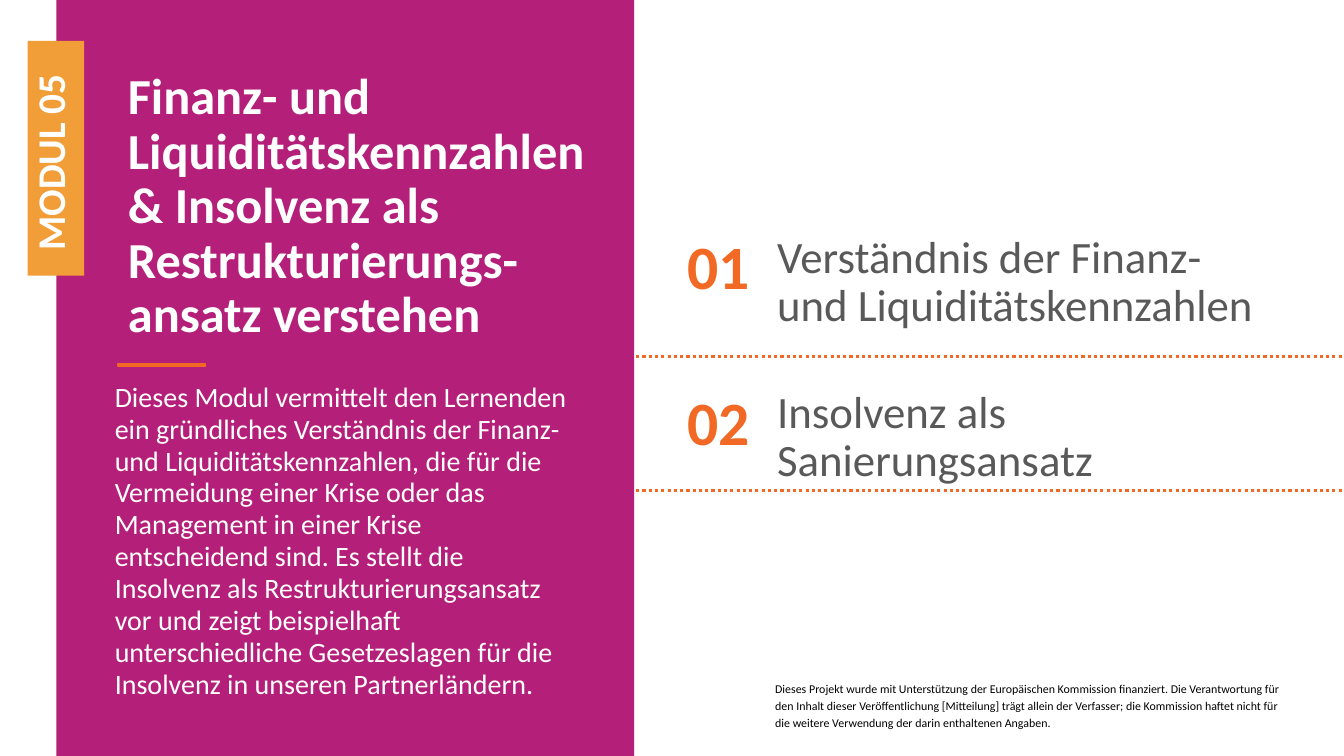
from dataclasses import dataclass

from lxml import etree
from pptx import Presentation
from pptx.dml.color import RGBColor
from pptx.enum.dml import MSO_LINE
from pptx.enum.shapes import MSO_CONNECTOR, MSO_SHAPE
from pptx.enum.text import MSO_ANCHOR as ANCHOR, PP_ALIGN as ALIGN
from pptx.oxml.ns import qn
from pptx.util import Inches, Pt

FONT = "Calibri"
COLORS = {
    "magenta": "B41F7A",
    "orange": "F16924",
    "amber": "F29E38",
    "grey": "595959",
    "white": "FFFFFF",
    "black": "000000",
}
SLIDE_W, SLIDE_H = 13.33, 7.5


@dataclass
class Style:
    size: float
    color: str
    bold: bool = False
    spacing: float | Pt = 0.9
    align: ALIGN = ALIGN.LEFT
    anchor: ANCHOR = ANCHOR.TOP


@dataclass
class Block:
    text: str
    left: float
    top: float
    width: float
    height: float
    style: Style


@dataclass
class Topic:
    number: str
    text: str
    number_top: float
    text_top: float
    text_height: float
    rule_y: float


TITLE = Style(36, "white", bold=True)
SUMMARY = Style(20, "white", spacing=Pt(22.8))
TAB = Style(28, "white", bold=True, spacing=Pt(24.4), anchor=ANCHOR.MIDDLE)
NUMBER = Style(44, "orange", bold=True, align=ALIGN.CENTER, anchor=ANCHOR.MIDDLE)
TOPIC = Style(32, "grey", anchor=ANCHOR.MIDDLE)
NOTICE = Style(8.5, "black", spacing=1.2)

BLOCKS = [
    Block("Finanz- und Liquiditätskennzahlen & Insolvenz als "
          "Restrukturierungs-ansatz verstehen", 1.17, 0.66, 4.99, 2.97, TITLE),
    Block("Dieses Modul vermittelt den Lernenden ein gründliches Verständnis der "
          "Finanz- und Liquiditätskennzahlen, die für die Vermeidung einer Krise "
          "oder das Management in einer Krise entscheidend sind. Es stellt die "
          "Insolvenz als Restrukturierungsansatz vor und zeigt beispielhaft "
          "unterschiedliche Gesetzeslagen für die Insolvenz in unseren "
          "Partnerländern.", 1.04, 3.73, 4.74, 2.71, SUMMARY),
    Block("Dieses Projekt wurde mit Unterstützung der Europäischen Kommission "
          "finanziert. Die Verantwortung für den Inhalt dieser Veröffentlichung "
          "[Mitteilung] trägt allein der Verfasser; die Kommission haftet nicht "
          "für die weitere Verwendung der darin enthaltenen Angaben.",
          7.59, 6.68, 5.2, 0.6, NOTICE),
]
TOPICS = [
    Topic("01", "Verständnis der Finanz- und Liquiditätskennzahlen",
          2.33, 2.36, 0.9, 3.54),
    Topic("02", "Insolvenz als Sanierungsansatz", 3.88, 4, 0.69, 4.87),
]


def rgb(name: str) -> RGBColor:
    return RGBColor.from_string(COLORS[name])


def write(s, text: str, style: Style) -> None:
    tf = s.text_frame
    tf.text = text
    tf.word_wrap = True
    tf.vertical_anchor = style.anchor
    p = tf.paragraphs[0]
    p.alignment = style.align
    p.line_spacing = style.spacing
    font = p.runs[0].font
    font.name = FONT
    font.size = Pt(style.size)
    font.bold = style.bold
    font.color.rgb = rgb(style.color)


def add_text(slide, block: Block) -> None:
    s = slide.shapes.add_textbox(Inches(block.left), Inches(block.top),
                                 Inches(block.width), Inches(block.height))
    write(s, block.text, block.style)


def add_rect(slide, left: float, top: float, width: float, height: float,
             color: str):
    s = slide.shapes.add_shape(MSO_SHAPE.RECTANGLE, Inches(left), Inches(top),
                               Inches(width), Inches(height))
    s.shadow.inherit = False
    s.fill.solid()
    s.fill.fore_color.rgb = rgb(color)
    s.line.fill.background()
    return s


def add_dotted_rule(slide, y: float) -> None:
    s = slide.shapes.add_connector(MSO_CONNECTOR.STRAIGHT, Inches(6.31), Inches(y),
                                   Inches(SLIDE_W), Inches(y))
    s.line.color.rgb = rgb("orange")
    s.line.width = Pt(2.25)
    s.line.dash_style = MSO_LINE.ROUND_DOT
    etree.SubElement(s._element.spPr, qn("a:effectLst"))


def add_topic(slide, topic: Topic) -> None:
    add_text(slide, Block(topic.number, 6.67, topic.number_top, 0.91, 0.69, NUMBER))
    add_text(slide, Block(topic.text, 7.61, topic.text_top, 5.2,
                          topic.text_height, TOPIC))
    add_dotted_rule(slide, topic.rule_y)


def main() -> None:
    prs = Presentation()
    prs.slide_width, prs.slide_height = Inches(SLIDE_W), Inches(SLIDE_H)
    slide = prs.slides.add_slide(prs.slide_layouts[6])

    # Magenta panel with its title, summary and the funding notice
    add_rect(slide, 0.56, 0, 5.73, SLIDE_H, "magenta")
    for block in BLOCKS:
        add_text(slide, block)

    # Short accent under the title
    accent = add_rect(slide, 1.17, 3.61, 0.87, 0.02, "orange")
    accent.line.color.rgb = rgb("orange")
    accent.line.width = Pt(1)

    # Module tab, read from bottom to top
    tab = add_rect(slide, -0.61, 1.29, 2.33, 0.56, "amber")
    tab.rotation = 270
    write(tab, "MODUL 05", TAB)
    tab.text_frame.margin_left = Inches(0.25)

    # Numbered topics
    for topic in TOPICS:
        add_topic(slide, topic)

    prs.save("out.pptx")


if __name__ == "__main__":
    main()
